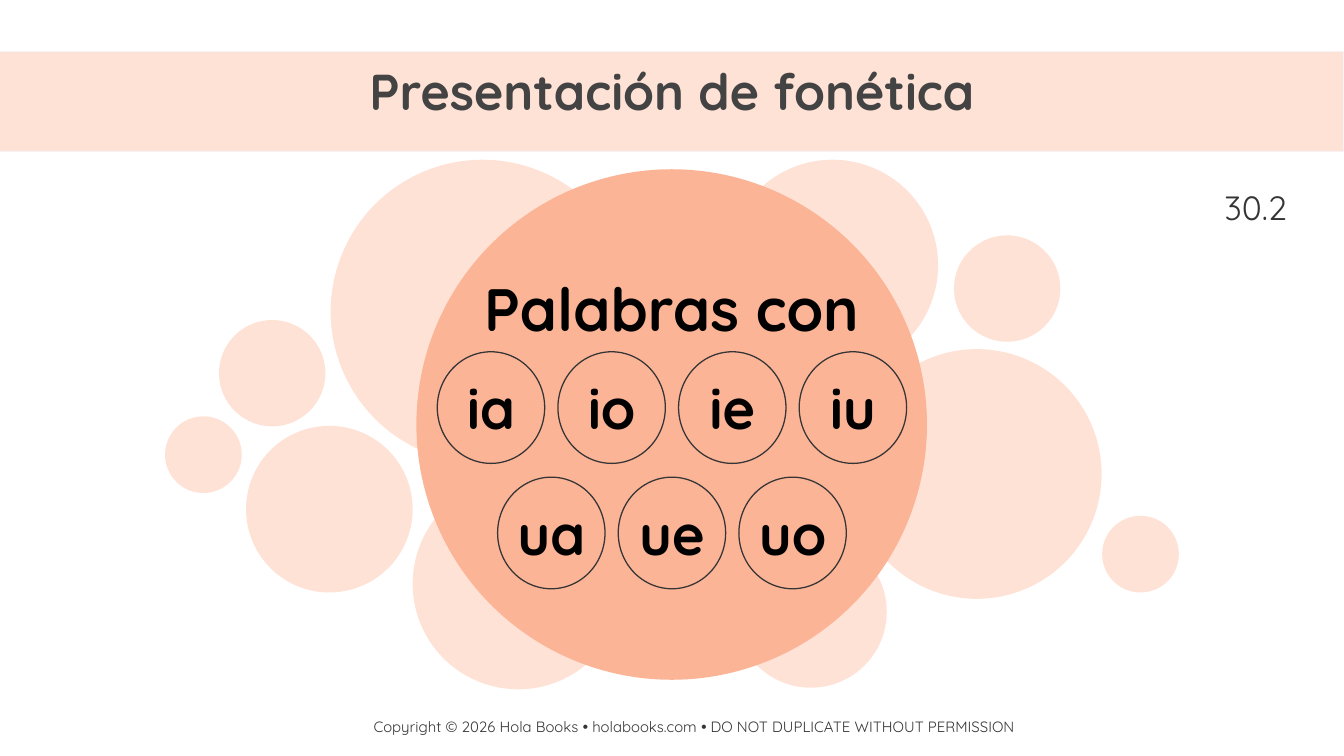
"""Build the phonics title slide on words with Spanish diphthongs."""
from pptx import Presentation
from pptx.dml.color import RGBColor
from pptx.enum.shapes import MSO_SHAPE as Shape
from pptx.enum.text import MSO_ANCHOR as Anchor, PP_ALIGN as Align
from pptx.util import Cm, Pt

FONT = "Quicksand"
COLORS = {
    "pale": "FFE2D6",
    "peach": "FCB497",
    "edge": "F6F2F7",
    "ink": "363535",
    "title": "434343",
    "black": "000000",
}
MIDDLE = 12.7
BUBBLES = [
    (16.1, 6.6, 4.72), (18.03, 4.45, 2.01), (13.89, 10.13, 2.87),
    (20.83, 9.75, 1.45), (13.74, 3.02, 3.99), (4.65, 8.05, 3.15),
    (4.14, 6.05, 2.01), (7.8, 9.04, 3.99), (3.12, 7.87, 1.45),
    (6.25, 3.02, 5.74),
]
SYLLABLE_ROWS = [(6.65, ["ia", "io", "ie", "iu"]), (9.02, ["ua", "ue", "uo"])]
RING_WIDTH, RING_HEIGHT, RING_PITCH = 2.03, 2.11, 2.28
COPYRIGHT = [
    ("Copyright © 2026 Hola Books ", False),
    ("•", True),
    (" holabooks.com ", False),
    ("•", True),
    (" DO NOT DUPLICATE WITHOUT PERMISSION", False),
]


def color(name):
    return RGBColor.from_string(COLORS[name])


def add_figure(slide, kind, box, fill=None, line=None, weight=0.75):
    figure = slide.shapes.add_shape(kind, *map(Cm, box))
    figure.shadow.inherit = False
    if fill:
        figure.fill.solid()
        figure.fill.fore_color.rgb = color(fill)
    else:
        figure.fill.background()
    if line:
        figure.line.color.rgb = color(line)
        figure.line.width = Pt(weight)
    else:
        figure.line.fill.background()


def add_label(slide, box, runs, size, ink, align=Align.CENTER, inset=0.0,
              anchor=Anchor.TOP, spacing=None):
    frame = slide.shapes.add_textbox(*map(Cm, box)).text_frame
    frame.word_wrap = True
    frame.vertical_anchor = anchor
    frame.margin_left = frame.margin_right = Cm(inset)
    frame.margin_top = frame.margin_bottom = Cm(inset)
    paragraph = frame.paragraphs[0]
    paragraph.alignment = align
    if spacing:
        paragraph.line_spacing = spacing
    for words, bold in runs:
        run = paragraph.add_run()
        run.text = words
        run.font.name = FONT
        run.font.size = Pt(size)
        run.font.bold = bold
        run.font.color.rgb = color(ink)


def add_syllable_row(slide, top, syllables):
    first = MIDDLE - (RING_PITCH * (len(syllables) - 1) + RING_WIDTH) / 2
    for index, syllable in enumerate(syllables):
        left = first + index * RING_PITCH
        add_figure(slide, Shape.OVAL, (left, top, RING_WIDTH, RING_HEIGHT),
                   line="ink", weight=0.69)
        add_label(slide, (left, top + 0.41, RING_WIDTH, 1.3),
                  [(syllable, True)], 30.1, "black")


def main():
    deck = Presentation()
    deck.slide_width, deck.slide_height = Cm(25.4), Cm(14.29)
    slide = deck.slides.add_slide(deck.slide_layouts[6])

    for left, top, diameter in BUBBLES:
        add_figure(slide, Shape.OVAL, (left, top, diameter, diameter), "pale")
    add_label(slide, (7.06, 13.51, 12.55, 0.33), COPYRIGHT, 8, "ink",
              align=Align.LEFT, spacing=1.15)

    add_figure(slide, Shape.RECTANGLE, (-0.08, 0.97, 25.48, 1.9), "pale", "edge")
    add_label(slide, (0.86, 1.27, 23.67, 1.27),
              [("Presentación de fonética", True)], 27, "title",
              inset=0.25, anchor=Anchor.BOTTOM, spacing=1.15)

    add_figure(slide, Shape.OVAL, (7.87, 3.2, 9.65, 9.65), "peach")
    add_label(slide, (5.61, 4.88, 14.17, 1.88), [("Palabras con", True)],
              32, "black", inset=0.25)
    for top, syllables in SYLLABLE_ROWS:
        add_syllable_row(slide, top, syllables)
    add_label(slide, (22.89, 3.28, 2.54, 1.27), [("30.2", False)], 18, "ink",
              align=Align.LEFT, inset=0.25)

    deck.save("out.pptx")


if __name__ == "__main__":
    main()
